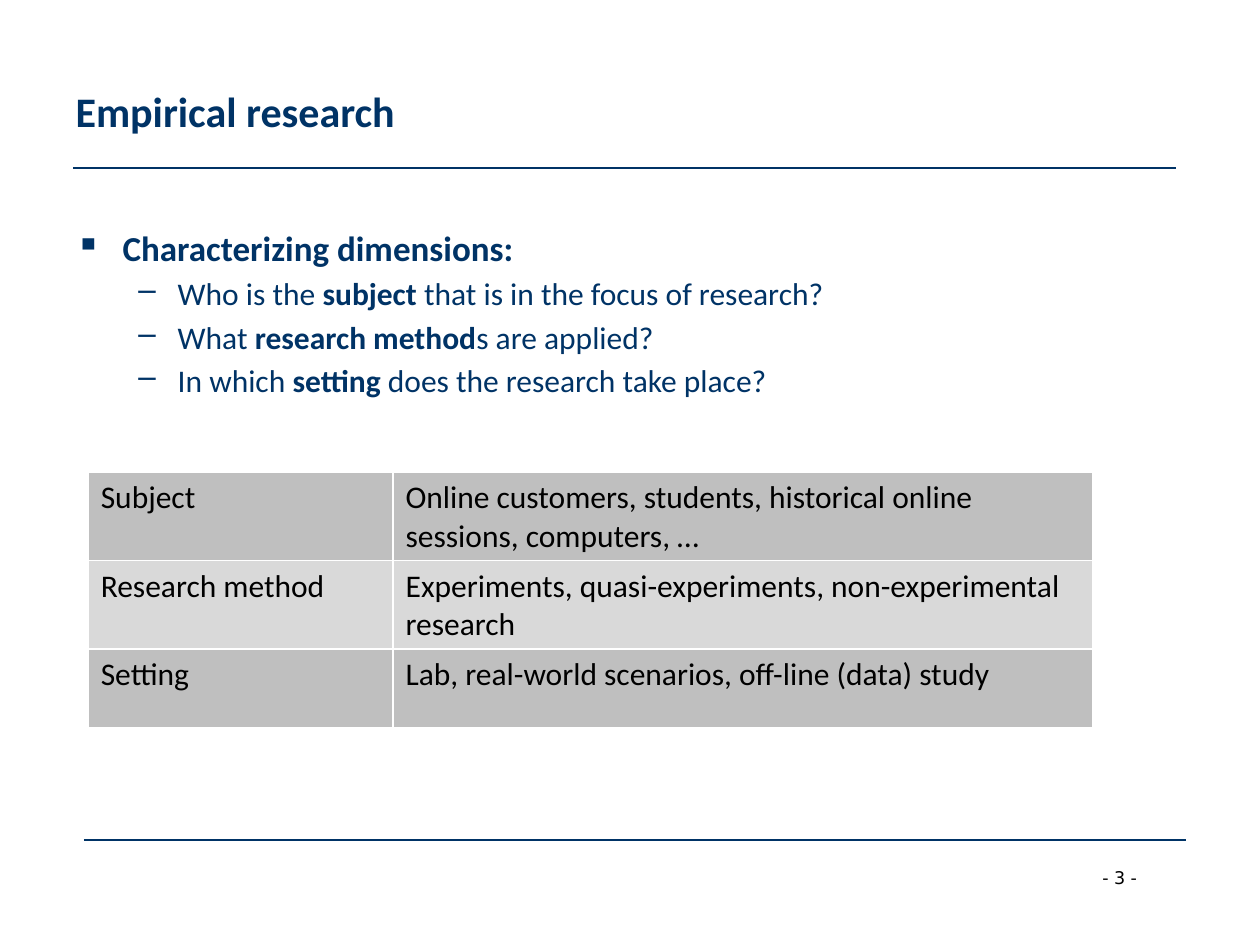
from dataclasses import dataclass
from typing import Any

from lxml import etree
from pptx import Presentation
from pptx.dml.color import RGBColor
from pptx.enum.shapes import MSO_CONNECTOR
from pptx.enum.text import MSO_ANCHOR, PP_ALIGN
from pptx.oxml.ns import qn
from pptx.util import Pt

STRAIGHT = MSO_CONNECTOR.STRAIGHT
MIDDLE = MSO_ANCHOR.MIDDLE
LEFT = PP_ALIGN.LEFT

COLORS = {
    "navy": "003366",
    "black": "000000",
    "white": "FFFFFF",
    "dark_band": "BFBFBF",
    "light_band": "D9D9D9",
}


def color(name):
    return RGBColor.from_string(COLORS[name])


@dataclass
class SlideBuilder:
    slide: Any
    font_name: str = "Calibri"

    def add_run(self, paragraph, text, size, color_name="navy", bold=False, font_name=None):
        run = paragraph.add_run()
        run.text = text
        run.font.name = font_name or self.font_name
        run.font.size = Pt(size)
        run.font.bold = bold
        run.font.color.rgb = color(color_name)

    def title(self, text, left, top, width, height):
        shape = self.slide.shapes.title
        shape.left, shape.top, shape.width, shape.height = map(Pt, (left, top, width, height))
        shape.text_frame.vertical_anchor = MIDDLE
        paragraph = shape.text_frame.paragraphs[0]
        paragraph.alignment = LEFT
        self.add_run(paragraph, text, 24, bold=True)

    def rule(self, left, top, width):
        line = self.slide.shapes.add_connector(
            STRAIGHT, Pt(left), Pt(top), Pt(left + width), Pt(top))
        line.line.color.rgb = color("navy")
        line.line.width = Pt(0.75)
        etree.SubElement(line._element.spPr, qn("a:effectLst"))

    def text_box(self, left, top, width, height):
        shape = self.slide.shapes.add_textbox(Pt(left), Pt(top), Pt(width), Pt(height))
        shape.text_frame.word_wrap = True
        return shape.text_frame

    def bullet(self, paragraph, symbol, margin, hanging, runs, size, level=0):
        paragraph.level = level
        properties = paragraph._p.get_or_add_pPr()
        properties.set("marL", str(Pt(margin)))
        properties.set("indent", str(-Pt(hanging)))
        etree.SubElement(properties, qn("a:buChar"), char=symbol)
        for text, bold in runs:
            self.add_run(paragraph, text, size, bold=bold)

    def cell(self, cell, text, fill):
        properties = cell._tc.get_or_add_tcPr()
        for side in ("lnL", "lnR", "lnT", "lnB"):
            border = etree.SubElement(properties, qn(f"a:{side}"), w=str(Pt(1)))
            solid = etree.SubElement(border, qn("a:solidFill"))
            etree.SubElement(solid, qn("a:srgbClr"), val=COLORS["white"])
        cell.fill.solid()
        cell.fill.fore_color.rgb = color(fill)
        self.add_run(cell.text_frame.paragraphs[0], text, 18, "black")

    def table(self, rows, left, top, column_widths, row_height):
        table = self.slide.shapes.add_table(
            len(rows), len(column_widths), Pt(left), Pt(top),
            Pt(sum(column_widths)), Pt(row_height * len(rows))).table
        table.first_row = False
        table.horz_banding = False
        for column, width in zip(table.columns, column_widths):
            column.width = Pt(width)
        for row_index, texts in enumerate(rows):
            table.rows[row_index].height = Pt(row_height)
            fill = "light_band" if row_index % 2 else "dark_band"
            for column_index, text in enumerate(texts):
                self.cell(table.cell(row_index, column_index), text, fill)


def main():
    presentation = Presentation()
    presentation.slide_width, presentation.slide_height = Pt(720), Pt(540)
    builder = SlideBuilder(presentation.slides.add_slide(presentation.slide_layouts[5]))

    # Header and footer
    builder.rule(42, 96, 630)
    builder.rule(48, 480, 630)
    page_number = builder.text_box(622.8, 491.8, 54.7, 19.4)
    builder.add_run(page_number.paragraphs[0], "- 3 -", 10, "black", font_name="DejaVu Sans")
    builder.title("Empirical research", 36, 18, 648, 90)

    # Characterizing dimensions
    body = builder.text_box(36, 126, 648, 356.4)
    builder.bullet(body.paragraphs[0], "▪", 27, 27, [("Characterizing dimensions:", True)], 20)
    questions = [
        ("Who is the ", "subject", " that is in the focus of research?"),
        ("What ", "research method", "s are applied?"),
        ("In which ", "setting", " does the research take place?"),
    ]
    for before, key_term, after in questions:
        paragraph = body.add_paragraph()
        paragraph.space_before = Pt(3.2)
        runs = [(before, False), (key_term, True), (after, False)]
        builder.bullet(paragraph, "–", 58.5, 22.5, runs, 18, level=1)

    # Examples for each dimension
    builder.table([
        ("Subject", "Online customers, students, historical online sessions, computers, …"),
        ("Research method", "Experiments, quasi-experiments, non-experimental research"),
        ("Setting", "Lab, real-world scenarios, off-line (data) study"),
    ], 50.4, 270, (174.2, 399.6), 45)

    presentation.save("out.pptx")


if __name__ == "__main__":
    main()
